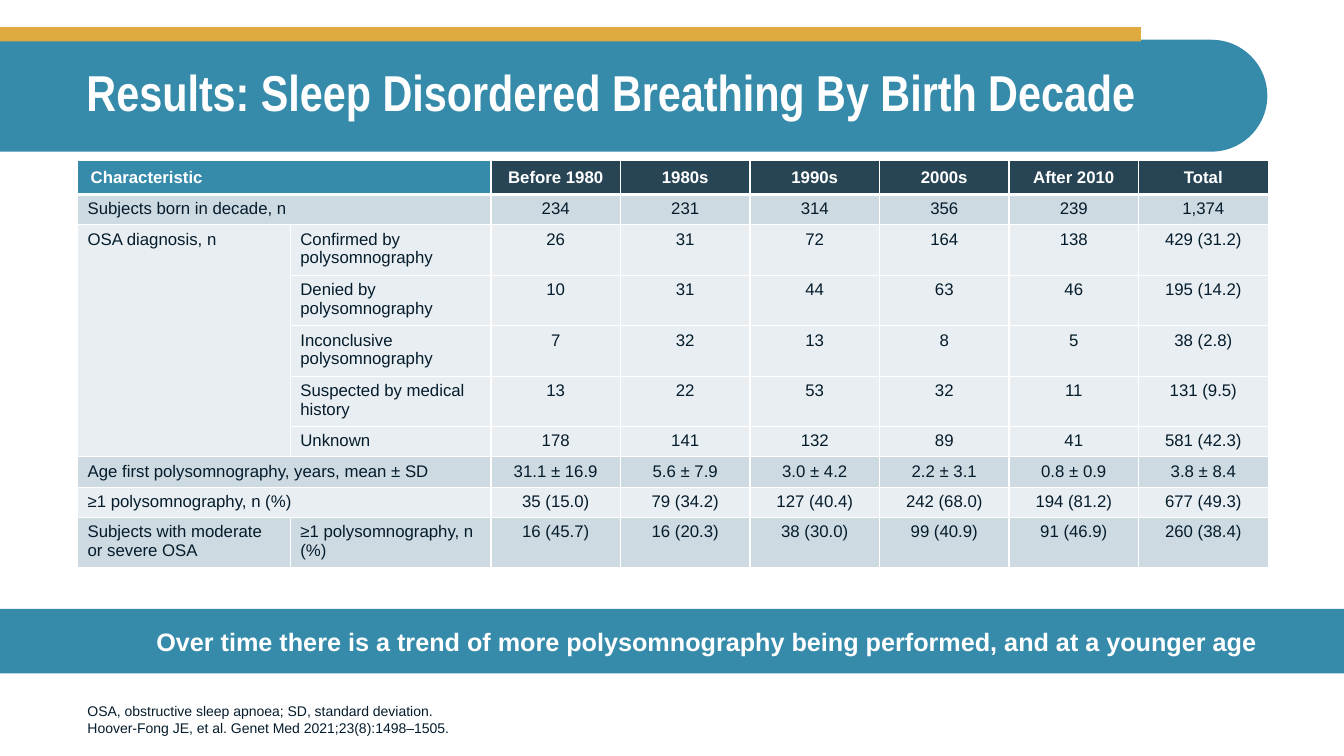
from lxml.etree import SubElement
from pptx import Presentation
from pptx.dml.color import RGBColor as Color
from pptx.enum.shapes import MSO_SHAPE as Preset
from pptx.enum.text import MSO_ANCHOR as Anchor, PP_ALIGN as Align
from pptx.oxml.ns import qn
from pptx.util import Inches, Pt

THEME = {
    "teal": Color.from_string("368BAB"),
    "gold": Color.from_string("DFAA40"),
    "navy": Color.from_string("274554"),
    "dark row": Color.from_string("CEDAE2"),
    "light row": Color.from_string("E8EEF1"),
    "ink": Color.from_string("051C2C"),
    "white": Color.from_string("FFFFFF"),
    "font": "Arial",
    "title font": "Arial Narrow",
    "title": Pt(36),
    "message": Pt(18),
    "table": Pt(12),
    "footnote": Pt(10),
}

presentation = Presentation()
presentation.slide_width = Inches(13.33)
presentation.slide_height = Inches(7.5)
slide = presentation.slides.add_slide(presentation.slide_layouts[6])
shapes = slide.shapes


def area(left, top, width, height):
    across, down = presentation.slide_width / 100, presentation.slide_height / 100
    return int(left * across), int(top * down), int(width * across), int(height * down)


def style(paragraph, size, color, bold=False, name=THEME["font"], align=Align.LEFT):
    paragraph.alignment = align
    paragraph.font.size = size
    paragraph.font.color.rgb = color
    paragraph.font.bold = bold
    paragraph.font.name = name


left, top, length, thickness = area(0, 5.25, 94.3, 14.8)
banner = shapes.add_shape(
    Preset.ROUND_2_SAME_RECTANGLE,
    left + (length - thickness) // 2, top + (thickness - length) // 2, thickness, length)
banner.rotation = 270
banner.adjustments[0] = 0
banner.adjustments[1] = 0.5
stripe = shapes.add_shape(Preset.RECTANGLE, *area(0, 3.6, 84.9, 1.87))
message = shapes.add_shape(Preset.RECTANGLE, *area(0, 80.53, 100, 8.53))
for shape, color in ((banner, "teal"), (stripe, "gold"), (message, "teal")):
    shape.shadow.inherit = False
    shape.fill.solid()
    shape.fill.fore_color.rgb = THEME[color]
    shape.line.fill.background()

title = shapes.add_textbox(*area(5.7, 5.2, 88.6, 14.67)).text_frame
title.word_wrap = True
title.vertical_anchor = Anchor.MIDDLE
title.text = "Results: Sleep Disordered Breathing By Birth Decade"
title.paragraphs[0].line_spacing = 0.9
style(title.paragraphs[0], THEME["title"], THEME["white"], True, THEME["title font"])

footnote = shapes.add_textbox(*area(5.77, 89.47, 74.1, 8.53)).text_frame
footnote.word_wrap = True
footnote.vertical_anchor = Anchor.BOTTOM
footnote.text = """OSA, obstructive sleep apnoea; SD, standard deviation.
Hoover-Fong JE, et al. Genet Med 2021;23(8):1498–1505."""
for paragraph in footnote.paragraphs:
    style(paragraph, THEME["footnote"], THEME["ink"])

frame = message.text_frame
frame.word_wrap = True
frame.vertical_anchor = Anchor.MIDDLE
frame.margin_left = frame.margin_right = Inches(0.79)
frame.text = "Over time there is a trend of more polysomnography being performed, and at a younger age"
paragraph = frame.paragraphs[0]
paragraph._p.get_or_add_pPr().set("marL", str(Inches(0.69)))
style(paragraph, THEME["message"], THEME["white"], True, align=Align.CENTER)

ROWS = [
    ("Characteristic", "", "Before 1980", "1980s", "1990s", "2000s", "After 2010", "Total"),
    ("Subjects born in decade, n", "", "234", "231", "314", "356", "239", "1,374"),
    ("OSA diagnosis, n", "Confirmed by polysomnography", "26", "31", "72", "164", "138", "429 (31.2)"),
    ("", "Denied by polysomnography", "10", "31", "44", "63", "46", "195 (14.2)"),
    ("", "Inconclusive polysomnography", "7", "32", "13", "8", "5", "38 (2.8)"),
    ("", "Suspected by medical history", "13", "22", "53", "32", "11", "131 (9.5)"),
    ("", "Unknown", "178", "141", "132", "89", "41", "581 (42.3)"),
    ("Age first polysomnography, years, mean ± SD", "",
     "31.1 ± 16.9", "5.6 ± 7.9", "3.0 ± 4.2", "2.2 ± 3.1", "0.8 ± 0.9", "3.8 ± 8.4"),
    ("≥1 polysomnography, n (%)", "",
     "35 (15.0)", "79 (34.2)", "127 (40.4)", "242 (68.0)", "194 (81.2)", "677 (49.3)"),
    ("Subjects with moderate or severe OSA", "≥1 polysomnography, n (%)",
     "16 (45.7)", "16 (20.3)", "38 (30.0)", "99 (40.9)", "91 (46.9)", "260 (38.4)"),
]
DARK_ROWS = (1, 7, 9)
TWO_LINE_ROWS = (2, 3, 4, 5, 9)
COLUMN_SHARES = [15.83, 14.93] + [9.64] * 6

table = shapes.add_table(len(ROWS), len(COLUMN_SHARES), *area(5.77, 21.2, 88.6, 51)).table
for column, share in zip(table.columns, COLUMN_SHARES):
    column.width = area(0, 0, share, 0)[2]

for row, values in enumerate(ROWS):
    header = row == 0
    table.rows[row].height = Inches(0.47 if row in TWO_LINE_ROWS else 0.28)
    for column, value in enumerate(values):
        cell = table.cell(row, column)
        cell.text = value
        style(cell.text_frame.paragraphs[0], THEME["table"],
              THEME["white"] if header else THEME["ink"], header,
              align=Align.CENTER if column > 1 else Align.LEFT)
        properties = cell._tc.get_or_add_tcPr()
        for side in "LRTB":
            thick = (row, side) in ((0, "B"), (1, "T"))
            border = SubElement(properties, qn(f"a:ln{side}"), w=str(Pt(3 if thick else 1)))
            fill = SubElement(border, qn("a:solidFill"))
            SubElement(fill, qn("a:srgbClr"), val=str(THEME["white"]))
        cell.fill.solid()
        if header:
            cell.vertical_anchor = Anchor.MIDDLE
            cell.margin_left = cell.margin_right = Inches(0.13)
            cell.margin_top = cell.margin_bottom = Inches(0.07)
            cell.fill.fore_color.rgb = THEME["navy" if column > 1 else "teal"]
        else:
            cell.fill.fore_color.rgb = THEME["dark row" if row in DARK_ROWS else "light row"]
    if values[0] and not values[1]:
        table.cell(row, 0).merge(table.cell(row, 1))
table.cell(2, 0).merge(table.cell(6, 0))

presentation.save("out.pptx")
